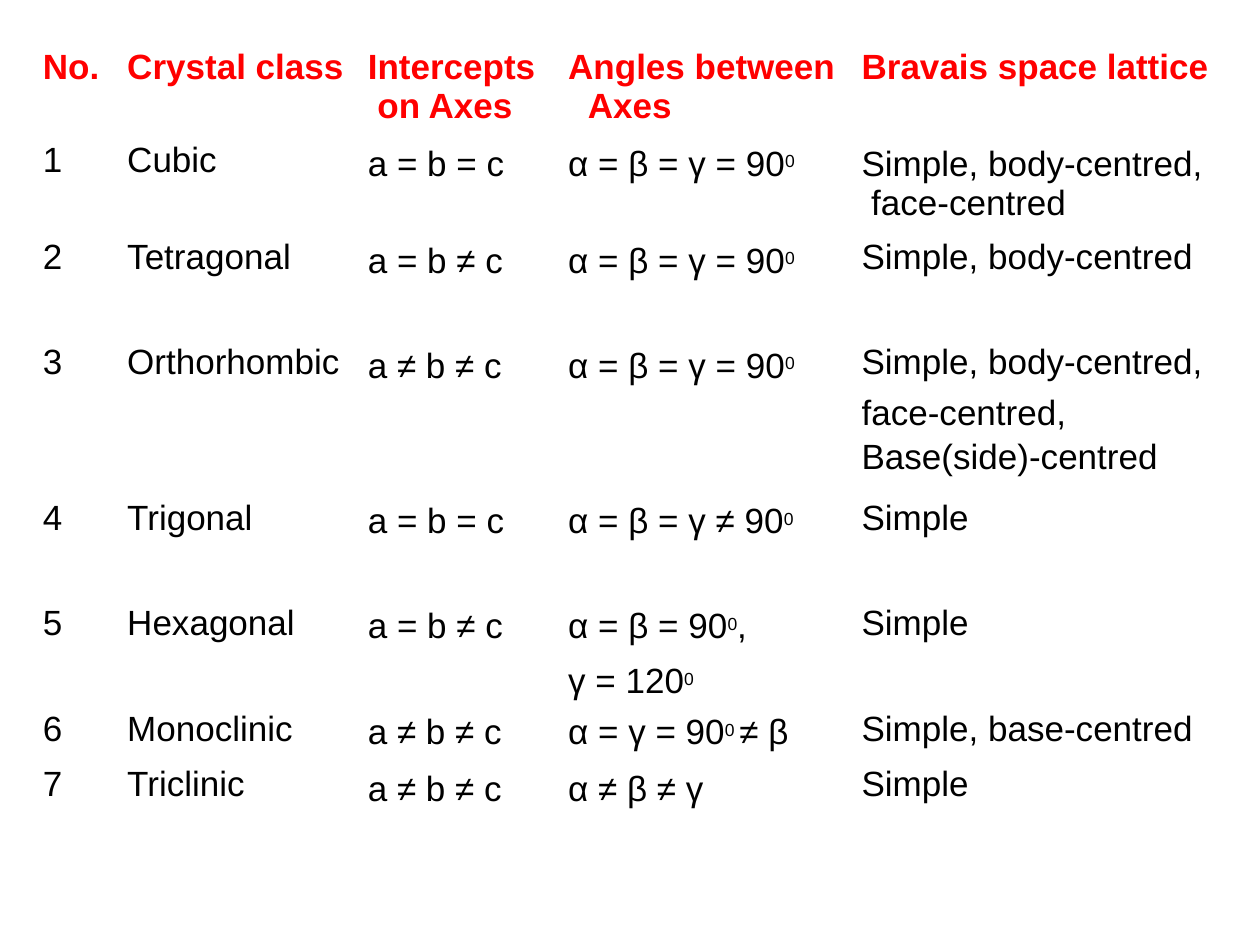
from pptx import Presentation
from pptx.dml.color import RGBColor
from pptx.enum.text import MSO_ANCHOR
from pptx.util import Pt

COLORS = {"heading": "FF0000", "body": "000000"}
HEADING_FONT = {"name": "Arial", "size": Pt(20), "bold": True}
BODY_FONT = {"name": "Arial", "size": Pt(20), "bold": False}
SUPERSCRIPT_FONT = {"size": Pt(17.2)}
TABLE_FORMAT = {"first_row": False, "horz_banding": False}
CELL_FORMAT = {"margin_left": 0, "margin_right": 0, "margin_top": 0,
               "margin_bottom": 0, "vertical_anchor": MSO_ANCHOR.TOP}

TABLE_LEFT, TABLE_TOP = 22.3, 27.4
COLUMN_WIDTHS = [42.5, 138.2, 112.3, 169.9, 208.1]
COLUMN_INDENTS = [2.2, 7.9, 7.2, 9.4, 7.2]
FORMULA_COLUMNS = (2, 3)
FORMULA_DROP = 2.1  # formulas sit slightly lower than names

# Row height, top inset, cell texts; ^ encloses a superscript
ROWS = [
    (49.7, 0, ["No.", "Crystal class", "Intercepts on Axes",
               "Angles between Axes", "Bravais space lattice"]),
    (55.4, 3.4, ["1", "Cubic", "a = b = c", "α = β = γ = 90^0^",
                 "Simple, body-centred, face-centred"]),
    (47.5, 3.4, ["2", "Tetragonal", "a = b ≠ c", "α = β = γ = 90^0^",
                 "Simple, body-centred"]),
    (43.9, 15.9, ["3", "Orthorhombic", "a ≠ b ≠ c", "α = β = γ = 90^0^",
                  "Simple, body-centred,"]),
    (25.9, 0, ["", "", "", "", "face-centred,"]),
    (31, 0.5, ["", "", "", "", "Base(side)-centred"]),
    (48.2, 4.2, ["4", "Trigonal", "a = b = c", "α = β = γ ≠ 90^0^", "Simple"]),
    (46.1, 15.9, ["5", "Hexagonal", "a = b ≠ c", "α = β = 90^0^,", "Simple"]),
    (30.2, 1.3, ["", "", "", "γ = 120^0^", ""]),
    (30.2, 0.3, ["6", "Monoclinic", "a ≠ b ≠ c", "α = γ = 90^0 ^≠ β",
                 "Simple, base-centred"]),
    (28.1, 1.4, ["7", "Triclinic", "a ≠ b ≠ c", "α ≠ β ≠ γ", "Simple"]),
]

# (row, column): hanging indent of wrapped lines
HANGING = {(0, 2): 5.5, (0, 3): 11.2, (1, 4): 5.5}
# (row, column): exact line spacing
LINE_SPACING = {(0, 0): 22.1, (0, 1): 22.1, (0, 2): 22.3, (0, 3): 22.3,
                (0, 4): 22.1, (1, 4): 22.3, (4, 4): 23.4,
                (10, 2): 23.4, (10, 3): 23.4}
EXTRA_INSET = {(1, 4): 2.2}


def apply_format(target, values):
    for attribute, value in values.items():
        setattr(target, attribute, value)


def add_runs(paragraph, text, font_format, color):
    for index, part in enumerate(text.split("^")):
        if not part:
            continue
        run = paragraph.add_run()
        run.text = part
        apply_format(run.font, font_format)
        run.font.color.rgb = RGBColor.from_string(COLORS[color])
        if index % 2:
            apply_format(run.font, SUPERSCRIPT_FONT)
            run._r.get_or_add_rPr().set("baseline", "29000")


def indent(paragraph, left, hanging):
    properties = paragraph._p.get_or_add_pPr()
    properties.set("marL", str(Pt(left + hanging)))
    properties.set("indent", str(-Pt(hanging)))


def fill_cell(cell, position, text, inset):
    row, column = position
    cell.fill.background()
    apply_format(cell, CELL_FORMAT)
    if not text:
        return
    if row and column in FORMULA_COLUMNS:
        inset += FORMULA_DROP
    cell.margin_top = Pt(inset + EXTRA_INSET.get(position, 0))
    paragraph = cell.text_frame.paragraphs[0]
    indent(paragraph, COLUMN_INDENTS[column], HANGING.get(position, 0))
    if position in LINE_SPACING:
        paragraph.line_spacing = Pt(LINE_SPACING[position])
    if row == 0:
        add_runs(paragraph, text, HEADING_FONT, "heading")
    else:
        add_runs(paragraph, text, BODY_FONT, "body")


def add_crystal_table(slide):
    total_height = sum(height for height, _, _ in ROWS)
    table = slide.shapes.add_table(
        len(ROWS), len(COLUMN_WIDTHS), Pt(TABLE_LEFT), Pt(TABLE_TOP),
        Pt(sum(COLUMN_WIDTHS)), Pt(total_height)).table
    apply_format(table, TABLE_FORMAT)
    for column, width in zip(table.columns, COLUMN_WIDTHS):
        column.width = Pt(width)
    for row, (height, inset, texts) in enumerate(ROWS):
        table.rows[row].height = Pt(height)
        for column, text in enumerate(texts):
            fill_cell(table.cell(row, column), (row, column), text, inset)


def main():
    presentation = Presentation()
    presentation.slide_width, presentation.slide_height = Pt(720), Pt(540)
    # Blank layout: the table is the only content
    slide = presentation.slides.add_slide(presentation.slide_layouts[6])
    add_crystal_table(slide)
    presentation.save("out.pptx")


if __name__ == "__main__":
    main()
